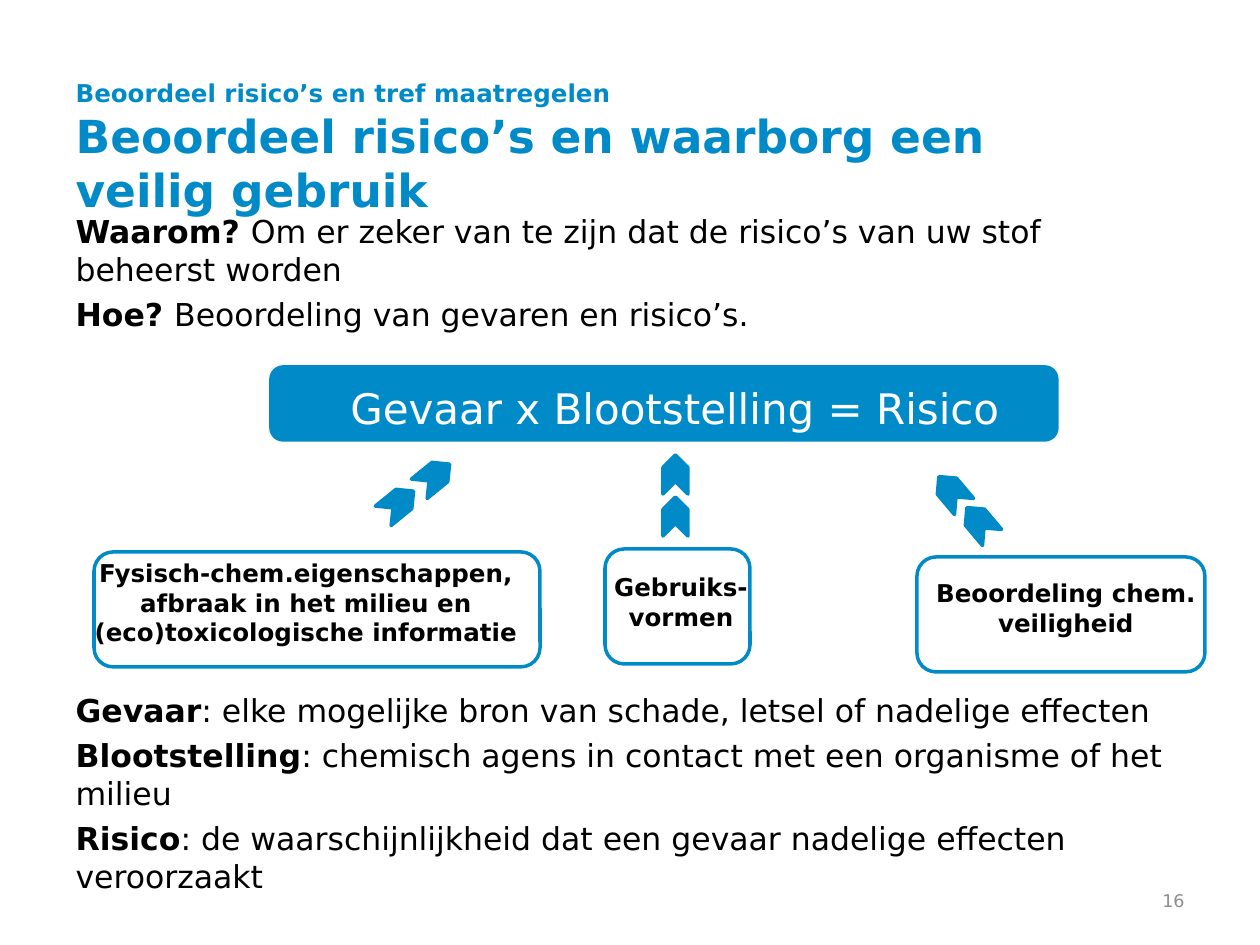
from pptx import Presentation
from pptx import util as u
from pptx.dml.color import RGBColor
from pptx.enum import shapes, text
from pptx.oxml.ns import qn

PX = 914400 // 126
FONT = "DejaVu Sans"
COLORS = {"blue": "008BC8", "black": "000000", "white": "FFFFFF", "grey": "8C8C8C"}
ALIGN = text.PP_ALIGN
KIND = shapes.MSO_SHAPE

# Each paragraph is a list of (text, size, bold) runs
TITLE = [
    [("Beoordeel risico’s en tref maatregelen", 14, True)],
    [("Beoordeel risico’s en waarborg een", 26, True)],
    [("veilig gebruik", 26, True)],
]
TERMS = [
    ("Waarom? ", "Om er zeker van te zijn dat de risico’s van uw stof beheerst worden"),
    ("Hoe? ", "Beoordeling van gevaren en risico’s."),
    ("Gevaar", ": elke mogelijke bron van schade, letsel of nadelige effecten"),
    ("Blootstelling", ": chemisch agens in contact met een organisme of het milieu"),
    ("Risico", ": de waarschijnlijkheid dat een gevaar nadelige effecten veroorzaakt"),
]
GAPS = [0, 4, 205, 4, 4]  # points before each term; the third clears the diagram

# Label lines, label box, outline box
CAUSES = [
    (["Beoordeling chem. veiligheid"], (885, 572, 362, 72), (917, 557, 288, 115)),
    (["Fysisch-chem.eigenschappen, afbraak in het milieu en",
      "(eco)toxicologische informatie"], (54, 552, 504, 102), (94, 552, 446, 115)),
    (["Gebruiks-", "vormen"], (508, 566, 346, 72), (605, 549, 145, 115)),
]
# Angle, then left and top of each chevron
ARROWS = [
    (320.9, [(415, 464), (379, 491)]),
    (229.9, [(960, 510), (932, 479)]),
    (270, [(656, 462), (656, 504)]),
]
BANNER = (271, 367, 786, 73)


def rgb(name):
    return RGBColor.from_string(COLORS[name])


def place(shape, box):
    shape.left, shape.top, shape.width, shape.height = [n * PX for n in box]


def write(shape, paras, color="black", align=ALIGN.LEFT, gaps=None,
          anchor=text.MSO_ANCHOR.TOP):
    frame = shape.text_frame
    frame.word_wrap = True
    frame.auto_size = text.MSO_AUTO_SIZE.NONE
    frame.vertical_anchor = anchor
    for i, runs in enumerate(paras):
        para = frame.paragraphs[0] if i == 0 else frame.add_paragraph()
        props = para._p.get_or_add_pPr()
        props.set("marL", "0")
        props.set("indent", "0")
        props.append(props.makeelement(qn("a:buNone"), {}))
        para.alignment = align
        para.space_before = u.Pt(gaps[i] if gaps else 0)
        for words, size, bold in runs:
            run = para.add_run()
            run.text = words
            run.font.name = FONT
            run.font.size = u.Pt(size)
            run.font.bold = bold
            run.font.color.rgb = rgb(color)


def label(slide, box, paras, **style):
    shape = slide.shapes.add_textbox(*[n * PX for n in box])
    write(shape, paras, **style)


def draw(slide, kind, box, filled=True, angle=0):
    shape = slide.shapes.add_shape(kind, *[n * PX for n in box])
    shape.shadow.inherit = False
    shape.rotation = angle
    if filled:
        shape.fill.solid()
        shape.fill.fore_color.rgb = rgb("blue")
    else:
        shape.fill.background()
    shape.line.color.rgb = rgb("blue")
    shape.line.width = u.Pt(2)
    edge = shape.line._get_or_add_ln()
    edge.append(edge.makeelement(qn("a:round"), {}))


def main():
    deck = Presentation()
    deck.slide_width, deck.slide_height = u.Inches(10), u.Inches(7.5)
    slide = deck.slides.add_slide(deck.slide_layouts[1])
    title, body = slide.placeholders

    place(title, (63, 72, 1134, 150))
    write(title, TITLE, color="blue")
    place(body, (63, 206, 1134, 624))
    write(body, [[(term, 18, True), (rest, 18, False)] for term, rest in TERMS],
          gaps=GAPS)
    label(slide, (903, 876, 294, 50), [[("16", 10, False)]], color="grey",
          align=ALIGN.RIGHT, anchor=text.MSO_ANCHOR.MIDDLE)

    draw(slide, KIND.ROUNDED_RECTANGLE, BANNER)
    label(slide, (323, 376, 704, 63), [[("Gevaar x Blootstelling = Risico", 24, False)]],
          color="white", align=ALIGN.CENTER)

    for lines, box, outline in CAUSES:
        label(slide, box, [[(line, 14, True)] for line in lines], align=ALIGN.CENTER)
        draw(slide, KIND.ROUNDED_RECTANGLE, outline, filled=False)
    for angle, spots in ARROWS:
        for x, y in spots:
            draw(slide, KIND.CHEVRON, (x, y, 39, 25), angle=angle)

    deck.save("out.pptx")


if __name__ == "__main__":
    main()
